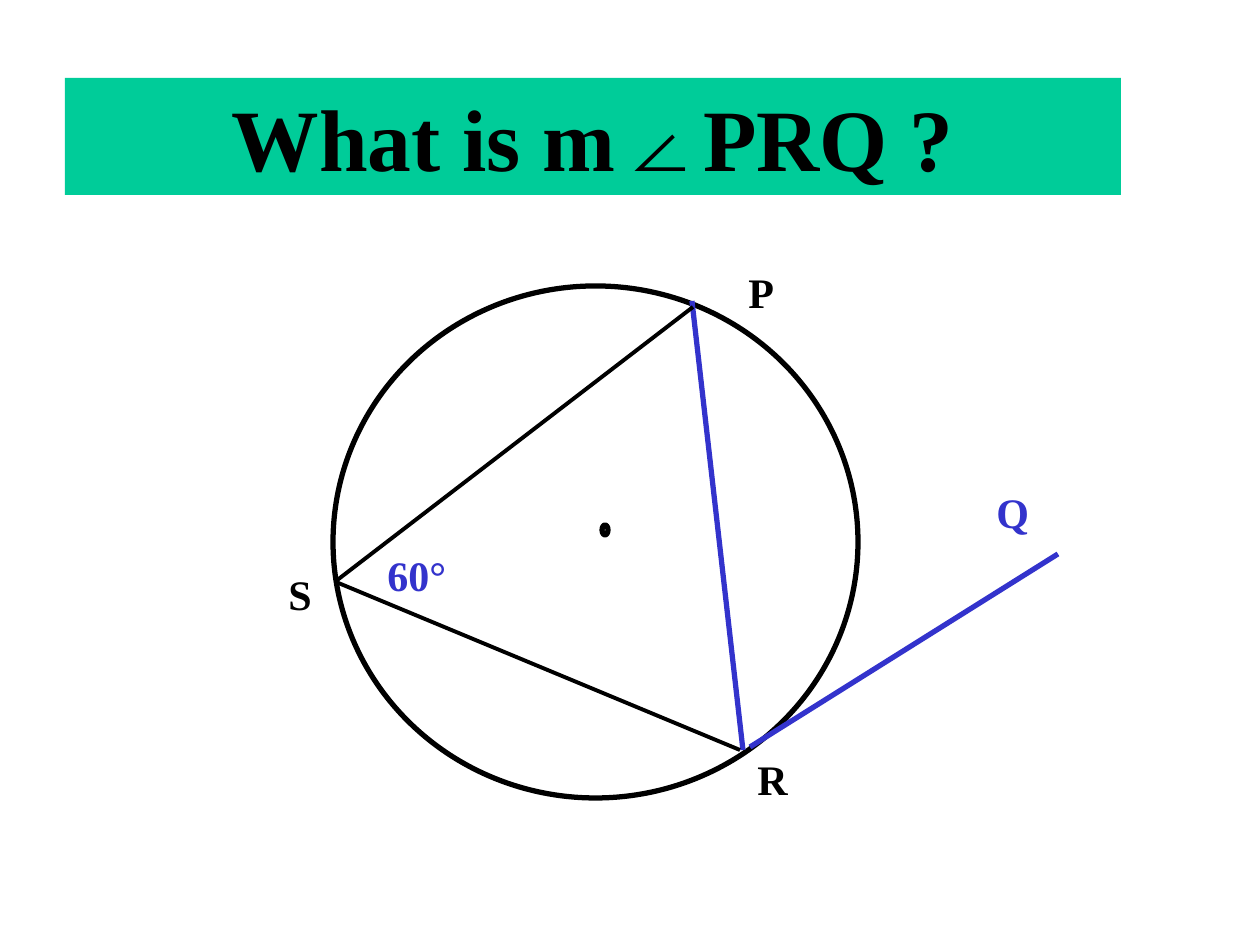
from lxml import etree
from pptx import Presentation
from pptx.dml.color import RGBColor
from pptx.enum.shapes import MSO_CONNECTOR, MSO_SHAPE
from pptx.enum.text import MSO_ANCHOR, PP_ALIGN
from pptx.oxml.ns import qn
from pptx.util import Emu, Pt

RECT, OVAL = MSO_SHAPE.RECTANGLE, MSO_SHAPE.OVAL
LINE = MSO_CONNECTOR.STRAIGHT
TOP = MSO_ANCHOR.TOP
LEFT, MID = PP_ALIGN.LEFT, PP_ALIGN.CENTER
BLACK, BLUE, GREEN = "000000", "3333CC", "00CC99"
FONT = "Times New Roman"


def px(*nums):
    return [Emu(round(n * 914400 / 126)) for n in nums]


def tint(color, code):
    color.rgb = RGBColor.from_string(code)


def apply(target, values):
    for name, value in values.items():
        setattr(target, name, value)


def write(shape, text, size, code, align):
    frame = shape.text_frame
    apply(frame, {"word_wrap": True, "vertical_anchor": TOP})
    para = frame.paragraphs[0]
    para.alignment = align
    run = para.add_run()
    run.text = text
    apply(run.font, {"name": FONT, "size": Pt(size), "bold": True})
    tint(run.font.color, code)


def banner(slide, x, y, w, h):
    bar = slide.shapes.add_shape(RECT, *px(x, y, w, h))
    bar.shadow.inherit = False
    bar.fill.solid()
    tint(bar.fill.fore_color, GREEN)
    bar.line.fill.background()
    write(bar, "What is m∠PRQ ?", 50, BLACK, MID)


def ring(slide, x, y, w, h):
    oval = slide.shapes.add_shape(OVAL, *px(x, y, w, h))
    oval.shadow.inherit = False
    oval.fill.background()
    tint(oval.line.color, BLACK)
    oval.line.width = Pt(3)


def chord(slide, x, y, start, end, code, width):
    ends = px(x + start[0], y + start[1], x + end[0], y + end[1])
    line = slide.shapes.add_connector(LINE, *ends)
    tint(line.line.color, code)
    line.line.width = Pt(width)
    etree.SubElement(line._element.spPr, qn("a:effectLst"))


def label(slide, x, y, w, text, code):
    box = slide.shapes.add_textbox(*px(x, y, w, 63))
    write(box, text, 24, code, LEFT)


def figure(slide, x, y):
    ring(slide, x + 57, y + 26, 525, 512)
    ring(slide, x + 326, y + 265, 6, 10)
    chords = [
        ((467, 490), (416, 41), BLUE, 3),
        ((782, 294), (474, 487), BLUE, 3),
        ((417, 47), (60, 321), BLACK, 2.25),
        ((464, 490), (60, 322), BLACK, 2.25),
    ]
    for item in chords:
        chord(slide, x, y, *item)
    labels = [
        (469, 487, 66, "R", BLACK),
        (0, 302, 66, "S", BLACK),
        (460, 0, 66, "P", BLACK),
        (708, 220, 108, "Q", BLUE),
        (99, 283, 108, "60°", BLUE),
    ]
    for left, top, *rest in labels:
        label(slide, x + left, y + top, *rest)


def main():
    deck = Presentation()
    wide, high = px(1260, 945)
    apply(deck, {"slide_width": wide, "slide_height": high})
    slide = deck.slides.add_slide(deck.slide_layouts[6])
    banner(slide, 65, 78, 1056, 117)
    figure(slide, 276, 260)
    deck.save("out.pptx")


if __name__ == "__main__":
    main()
